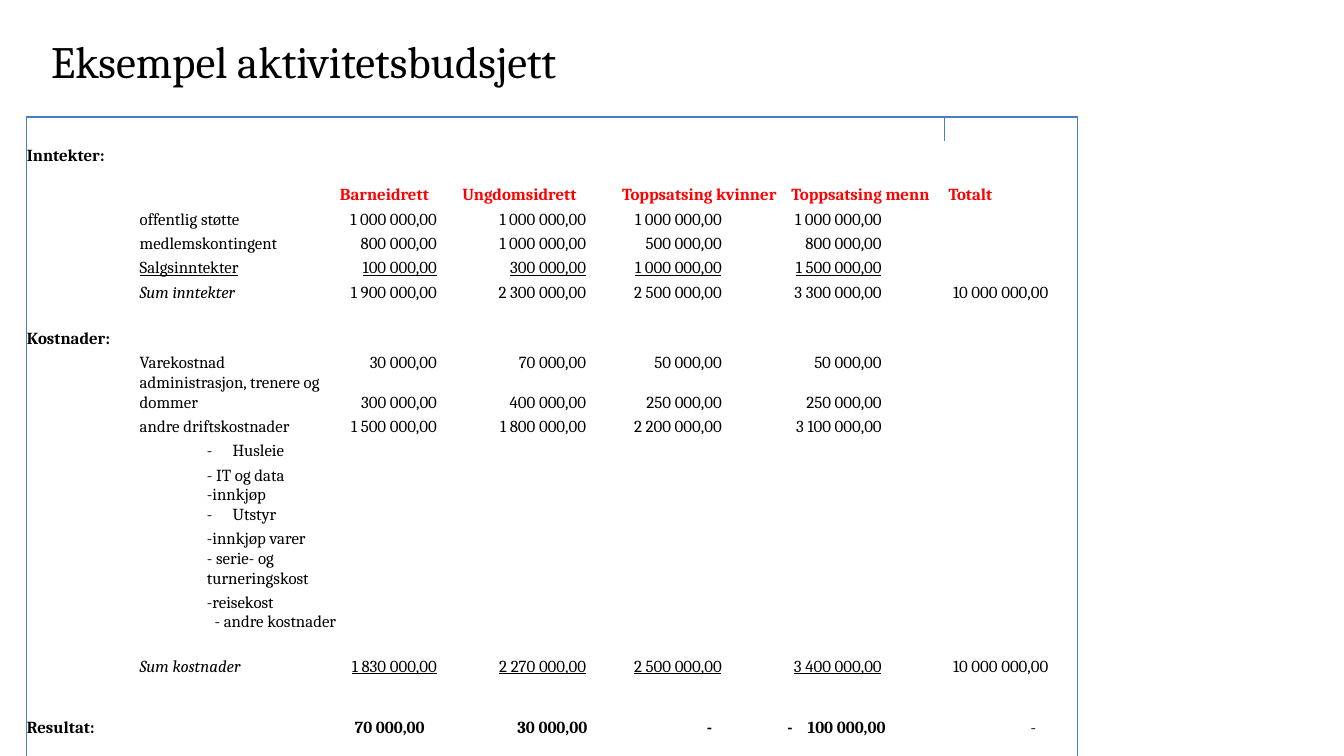
from dataclasses import dataclass

import pptx
import pptx.dml.color
import pptx.enum.text
import pptx.util
from lxml import etree
from pptx.oxml.ns import qn

Inches = pptx.util.Inches
Pt = pptx.util.Pt
Align = pptx.enum.text.PP_ALIGN
Anchor = pptx.enum.text.MSO_ANCHOR

FONT = "Cambria"
BLACK, RED, BLUE = "000000", "FF0000", "4B7EBC"
PLAIN_STYLE = "{2D5ABB26-0587-4C30-8999-92F81FD0307C}"
LEFT, TOP, HEIGHT = 0.2, 0.87, 4.83
ROWS_HEIGHT = 4.78
WIDTHS = (0.84, 1.46, 0.91, 1.19, 1.26, 1.17, 0.99)
STOPS = (0.75, 0.95, 0.77, 0.7, 0.77)
RESULT_STOPS = (0.66, 0.96, 0.7, 0.73, 0.68)
LOW, MID, TALL = 0.16, 0.18, 0.29


@dataclass
class Row:
    height: float = MID
    group: str = ""
    label: str = ""
    sums: tuple[str, ...] = ()
    italic: bool = False
    ruled: bool = False
    rule_label: bool = False
    bold: bool = False
    stops: tuple[float, ...] = STOPS


@dataclass
class Item:
    """A cost detail, one line per entry; a leading * marks a bullet."""
    lines: tuple[str, ...]
    height: float = MID
    right: bool = False


HEADS = ("Barneidrett", "Ungdomsidrett", "Toppsatsing kvinner",
         "Toppsatsing menn", "Totalt")
ROWS = (
    Row(),
    Row(group="Inntekter:"),
    Row(TALL),
    Row(label="offentlig støtte", sums=("1 000 000,00",) * 4),
    Row(label="medlemskontingent",
        sums=("800 000,00", "1 000 000,00", "500 000,00", "800 000,00")),
    Row(label="Salgsinntekter", ruled=True, rule_label=True,
        sums=("100 000,00", "300 000,00", "1 000 000,00", "1 500 000,00")),
    Row(label="Sum inntekter", italic=True,
        sums=("1 900 000,00", "2 300 000,00", "2 500 000,00",
              "3 300 000,00", "10 000 000,00")),
    Row(LOW),
    Row(group="Kostnader:"),
    Row(label="Varekostnad",
        sums=("30 000,00", "70 000,00", "50 000,00", "50 000,00")),
    Row(TALL, label="administrasjon, trenere og dommer",
        sums=("300 000,00", "400 000,00", "250 000,00", "250 000,00")),
    Row(label="andre driftskostnader",
        sums=("1 500 000,00", "1 800 000,00", "2 200 000,00", "3 100 000,00")),
    Item(("*Husleie",)),
    Item(("- IT og data",)),
    Item(("-innkjøp", "*Utstyr"), TALL),
    Item(("-innkjøp varer",)),
    Item(("- serie- og turneringskost",), TALL),
    Item(("-reisekost",)),
    Item(("- andre kostnader",), TALL, right=True),
    Row(label="Sum kostnader", italic=True, ruled=True,
        sums=("1 830 000,00", "2 270 000,00", "2 500 000,00",
              "3 400 000,00", "10 000 000,00")),
    Row(LOW),
    Row(TALL, group="Resultat:", bold=True, stops=RESULT_STOPS,
        sums=("70 000,00", "30 000,00", "-", "-\t100 000,00", "-")),
    Row(LOW),
)
HEAD_ROW = 2


def paint(target, color: str) -> None:
    target.rgb = pptx.dml.color.RGBColor.from_string(color)


def style(para, size: float = 9, color: str = BLACK, bold: bool = False,
          italic: bool = False, line: bool = False) -> None:
    font = para.font
    font.name, font.size = FONT, Pt(size)
    font.bold, font.italic, font.underline = bold, italic, line
    paint(font.color, color)


def indent(para, margin: float, first: float = 0) -> None:
    props = para._p.get_or_add_pPr()
    props.set("marL", str(Inches(margin)))
    props.set("indent", str(Inches(first)))


def add_stop(para, place: float) -> None:
    tabs = etree.SubElement(para._p.get_or_add_pPr(), qn("a:tabLst"))
    etree.SubElement(tabs, qn("a:tab"), pos=str(Inches(place)), algn="r")


def add_dash(para) -> None:
    props = para._p.get_or_add_pPr()
    etree.SubElement(props, qn("a:buFont"), typeface=FONT)
    etree.SubElement(props, qn("a:buChar"), char="-")


def edge(cell, side: str) -> None:
    """Draw one border; side is L, R, T or B."""
    line = etree.SubElement(cell._tc.get_or_add_tcPr(), qn(f"a:ln{side}"),
                            w=str(Pt(0.75)))
    fill = etree.SubElement(line, qn("a:solidFill"))
    etree.SubElement(fill, qn("a:srgbClr"), val=BLUE)


def write(cell, text: str, **look) -> None:
    para = cell.text_frame.paragraphs[0]
    para.add_run().text = text
    style(para, **look)


def fill_row(cells, row: Row) -> None:
    if row.group:
        write(cells[0], row.group, bold=True)
    if row.label:
        write(cells[1], row.label, italic=row.italic, line=row.rule_label)
    for i, (text, stop) in enumerate(zip(row.sums, row.stops)):
        last = i == len(HEADS) - 1
        add_stop(cells[i + 2].text_frame.paragraphs[0], stop)
        write(cells[i + 2], text if "\t" in text else "\t" + text,
              bold=row.bold and not last, line=row.ruled and not last)


def fill_item(cell, item: Item) -> None:
    frame = cell.text_frame
    for i, text in enumerate(item.lines):
        para = frame.add_paragraph() if i else frame.paragraphs[0]
        if item.right:
            para.alignment = Align.RIGHT
            cell.vertical_anchor = Anchor.TOP
        else:
            para.level = 1
            if text.startswith("*"):
                indent(para, 0.69, -0.19)
                add_dash(para)
            else:
                indent(para, 0.5)
        para.add_run().text = text.lstrip("*")
        style(para)


def add_budget(slide) -> None:
    rows, cols = len(ROWS), len(WIDTHS)
    frame = slide.shapes.add_table(rows, cols, Inches(LEFT), Inches(TOP),
                                   Inches(sum(WIDTHS)), Inches(HEIGHT))
    table = frame.table
    table.first_row = table.horz_banding = False
    table._tbl.tblPr.find(qn("a:tableStyleId")).text = PLAIN_STYLE
    for col, width in zip(table.columns, WIDTHS):
        col.width = Inches(width)
    scale = ROWS_HEIGHT / sum(row.height for row in ROWS)
    for r, row in enumerate(ROWS):
        table.rows[r].height = Inches(row.height * scale)
        cells = [table.cell(r, c) for c in range(cols)]
        for c, cell in enumerate(cells):
            cell.margin_left = cell.margin_right = 0
            cell.margin_top = cell.margin_bottom = 0
            cell.vertical_anchor = Anchor.BOTTOM
            total_top = r == 0 and c == cols - 1
            sides = (("L", c == 0 or total_top), ("R", c == cols - 1),
                     ("T", r == 0), ("B", r == rows - 1))
            for side, drawn in sides:
                if drawn:
                    edge(cell, side)
            cell.fill.background()
        if isinstance(row, Item):
            fill_item(cells[1], row)
        else:
            fill_row(cells, row)
        if r == HEAD_ROW:
            for cell, head in zip(cells[2:], HEADS):
                indent(cell.text_frame.paragraphs[0], 0.03)
                write(cell, head, color=RED, bold=True)
        for cell in cells:
            para = cell.text_frame.paragraphs[0]
            if not para.runs:  # keeps empty rows low
                etree.SubElement(para._p, qn("a:endParaRPr"), sz="900")
    table.cell(0, 0).merge(table.cell(0, 1))
    frame.height = Inches(HEIGHT)


def add_title(slide) -> None:
    title = slide.shapes.title
    title.left, title.top = Inches(0.28), Inches(0.2)
    title.width, title.height = Inches(6.85), Inches(0.71)
    title.text_frame.text = "Eksempel aktivitetsbudsjett"
    title.text_frame.vertical_anchor = Anchor.TOP
    para = title.text_frame.paragraphs[0]
    para.alignment = Align.LEFT
    style(para, 24)


def main() -> None:
    deck = pptx.Presentation()
    deck.slide_width, deck.slide_height = Inches(10), Inches(10 * 9 / 16)
    slide = deck.slides.add_slide(deck.slide_layouts[0])
    sub = slide.placeholders[1]._element
    sub.getparent().remove(sub)
    add_title(slide)
    add_budget(slide)
    deck.save("out.pptx")


if __name__ == "__main__":
    main()
